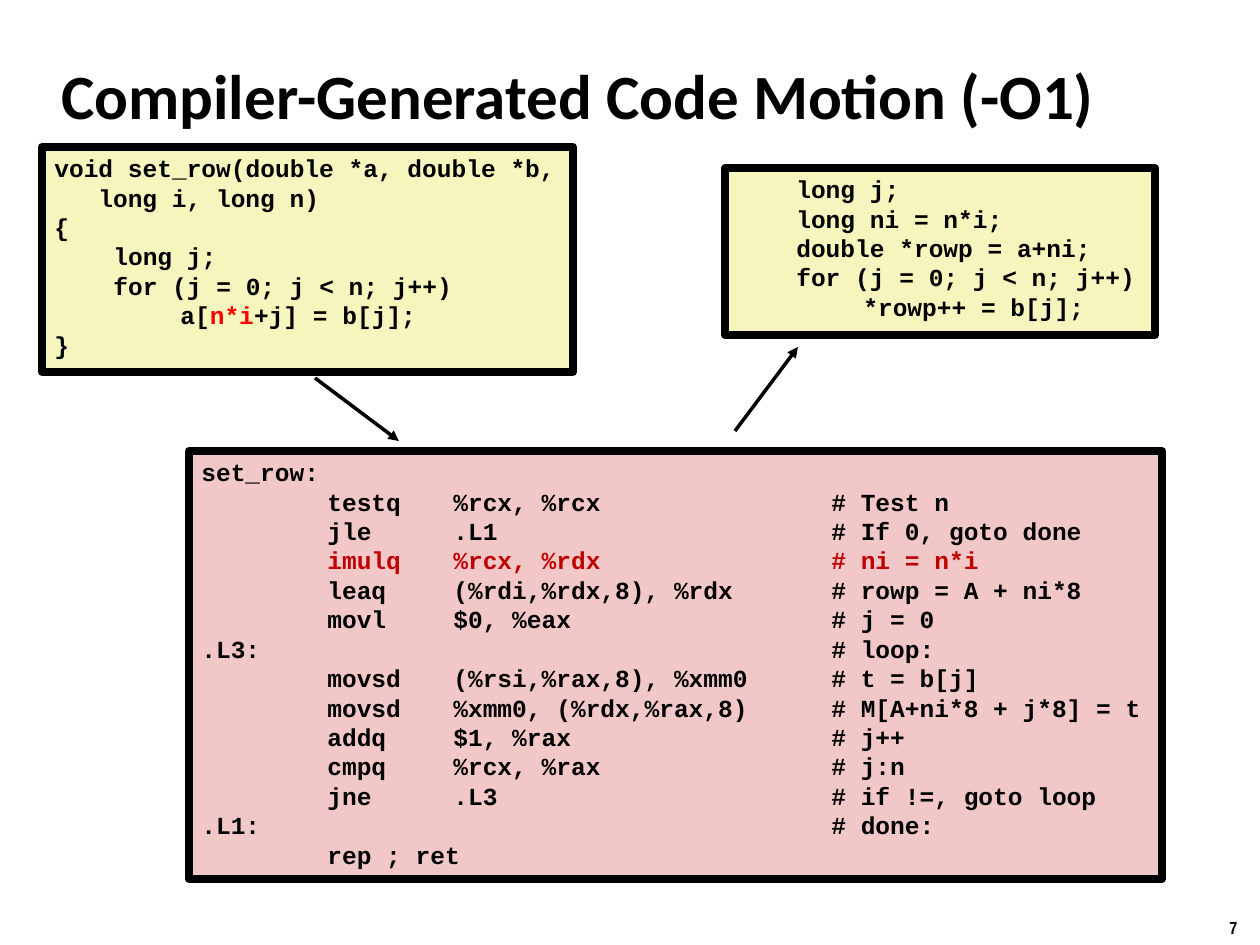
from lxml import etree
from pptx import Presentation
from pptx.dml.color import RGBColor
from pptx.enum.shapes import MSO_CONNECTOR, MSO_SHAPE
from pptx.enum.text import MSO_ANCHOR, PP_ALIGN
from pptx.oxml.ns import qn
from pptx.util import Pt

SCALE = 914400 / 126
BLACK = RGBColor(0x00, 0x00, 0x00)
RED = RGBColor(0xFF, 0x00, 0x00)
DARK_RED = RGBColor(0xC0, 0x00, 0x00)
YELLOW = RGBColor(0xF6, 0xF5, 0xBD)
PINK = RGBColor(0xF1, 0xC7, 0xC7)

RECTANGLE = MSO_SHAPE.RECTANGLE
STRAIGHT = MSO_CONNECTOR.STRAIGHT
LEFT = PP_ALIGN.LEFT
TOP = MSO_ANCHOR.TOP
MIDDLE = MSO_ANCHOR.MIDDLE

TITLE_FORMAT = {"name": "Calibri", "size": Pt(36), "bold": True}
CODE_FORMAT = {"name": "Courier New", "size": Pt(14), "bold": True}
NUMBER_FORMAT = {"name": "Arial Narrow", "size": Pt(10), "bold": True}

# Code lines: indent in px, then runs of text and colour.
SOURCE_CODE = [
    (0, [("void set_row(double *a, double *b,", BLACK)]),
    (44, [("long i, long n)", BLACK)]),
    (0, [("{", BLACK)]),
    (59, [("long j;", BLACK)]),
    (59, [("for (j = 0; j < n; j++)", BLACK)]),
    (126, [("a[", BLACK), ("n*i", RED), ("+j] = b[j];", BLACK)]),
    (0, [("}", BLACK)]),
]
MOVED_CODE = [
    (59, [("long j;", BLACK)]),
    (59, [("long ni = n*i;", BLACK)]),
    (59, [("double *rowp = a+ni;", BLACK)]),
    (59, [("for (j = 0; j < n; j++)", BLACK)]),
    (126, [("*rowp++ = b[j];", BLACK)]),
]
# Assembly rows: label, instruction, operands, comment.
ASSEMBLY = [
    ("set_row:",),
    ("", "testq", "%rcx, %rcx", "# Test n"),
    ("", "jle", ".L1", "# If 0, goto done"),
    ("", "imulq", "%rcx, %rdx", "# ni = n*i"),
    ("", "leaq", "(%rdi,%rdx,8), %rdx", "# rowp = A + ni*8"),
    ("", "movl", "$0, %eax", "# j = 0"),
    (".L3:", "", "", "# loop:"),
    ("", "movsd", "(%rsi,%rax,8), %xmm0", "# t = b[j]"),
    ("", "movsd", "%xmm0, (%rdx,%rax,8)", "# M[A+ni*8 + j*8] = t"),
    ("", "addq", "$1, %rax", "# j++"),
    ("", "cmpq", "%rcx, %rax", "# j:n"),
    ("", "jne", ".L3", "# if !=, goto loop"),
    (".L1:", "", "", "# done:"),
    ("", "rep ; ret"),
]
ASSEMBLY_TABS = (126, 252, 630)


def px(length):
    return round(length * SCALE)


def add_run(paragraph, text, text_format, color):
    run = paragraph.add_run()
    run.text = text
    for name, value in text_format.items():
        setattr(run.font, name, value)
    run.font.color.rgb = color


def set_tabs(paragraph, stops):
    tab_list = etree.SubElement(paragraph._p.get_or_add_pPr(), qn("a:tabLst"))
    for stop in stops:
        etree.SubElement(tab_list, qn("a:tab"), pos=str(px(stop)), algn="l")


def add_label(slide, box, text, text_format, wrap):
    """Add one line of plain text, such as the title or the page number."""
    frame = slide.shapes.add_textbox(*map(px, box)).text_frame
    frame.word_wrap = wrap
    frame.vertical_anchor = MIDDLE if wrap else TOP
    add_run(frame.paragraphs[0], text, text_format, BLACK)


def add_code_panel(slide, box, fill, lines, tabs=()):
    panel = slide.shapes.add_shape(RECTANGLE, *map(px, box))
    panel.shadow.inherit = False
    panel.fill.solid()
    panel.fill.fore_color.rgb = fill
    panel.line.color.rgb = BLACK
    panel.line.width = Pt(4.5)
    frame = panel.text_frame
    frame.word_wrap = True
    frame.vertical_anchor = TOP
    for index, (indent, runs) in enumerate(lines):
        paragraph = frame.add_paragraph() if index else frame.paragraphs[0]
        paragraph.alignment = LEFT
        paragraph._p.get_or_add_pPr().set("marL", str(px(indent)))
        if tabs:
            set_tabs(paragraph, tabs)
        for text, color in runs:
            add_run(paragraph, text, CODE_FORMAT, color)


def add_assembly_panel(slide, box):
    lines = [
        (0, [("\t".join(row), DARK_RED if "imulq" in row else BLACK)])
        for row in ASSEMBLY
    ]
    add_code_panel(slide, box, PINK, lines, ASSEMBLY_TABS)


def add_arrow(slide, start, end):
    arrow = slide.shapes.add_connector(STRAIGHT, *map(px, start + end))
    arrow.line.color.rgb = BLACK
    arrow.line.width = Pt(2)
    etree.SubElement(arrow.line._get_or_add_ln(), qn("a:tailEnd"), type="triangle")
    etree.SubElement(arrow._element.spPr, qn("a:effectLst"))


def main():
    presentation = Presentation()
    presentation.slide_width = px(1260)
    presentation.slide_height = px(945)
    slide = presentation.slides.add_slide(presentation.slide_layouts[6])

    add_label(slide, (1217, 911, 43, 34), "7", NUMBER_FORMAT, False)
    add_label(slide, (49, 42, 1113, 104), "Compiler-Generated Code Motion (-O1)",
              TITLE_FORMAT, True)
    add_assembly_panel(slide, (189, 451, 973, 428))
    add_arrow(slide, (315, 378), (399, 441))
    add_arrow(slide, (735, 431), (798, 347))
    add_code_panel(slide, (725, 168, 430, 167), YELLOW, MOVED_CODE)
    add_code_panel(slide, (42, 147, 531, 225), YELLOW, SOURCE_CODE)

    presentation.save("out.pptx")


if __name__ == "__main__":
    main()
